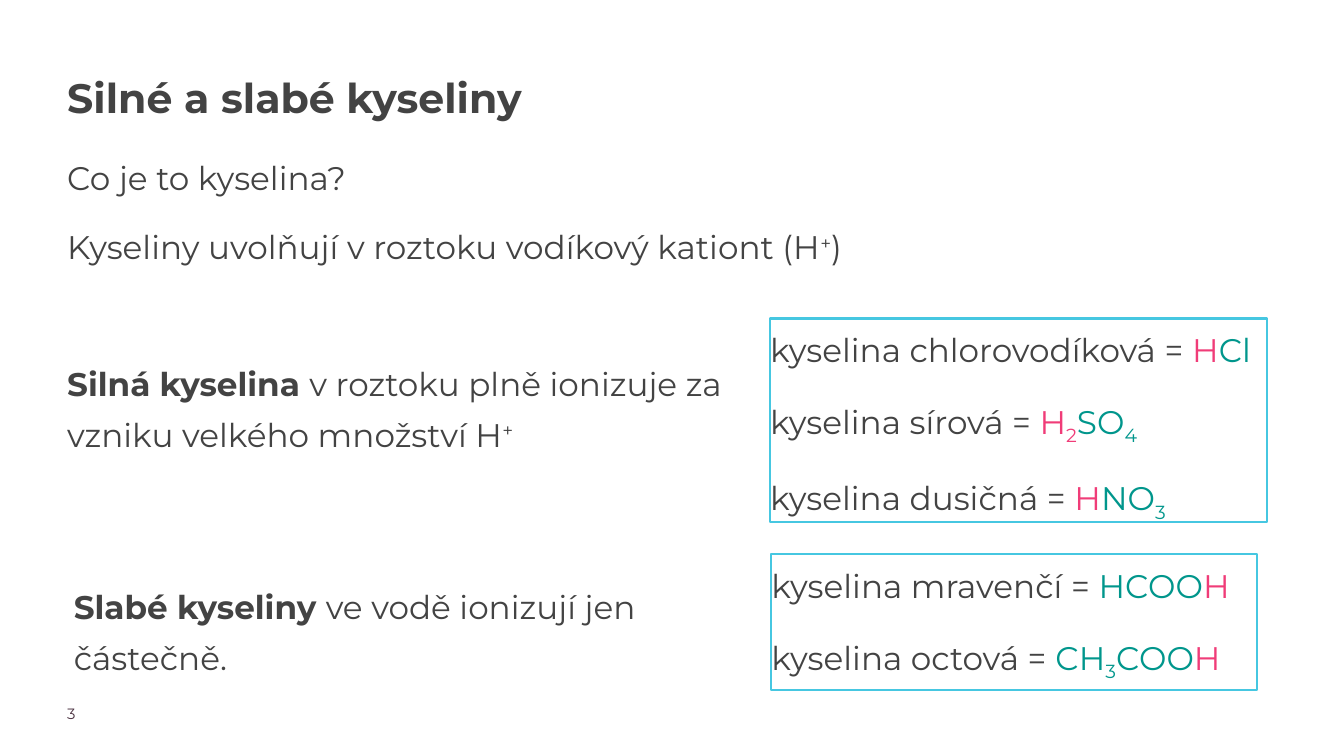
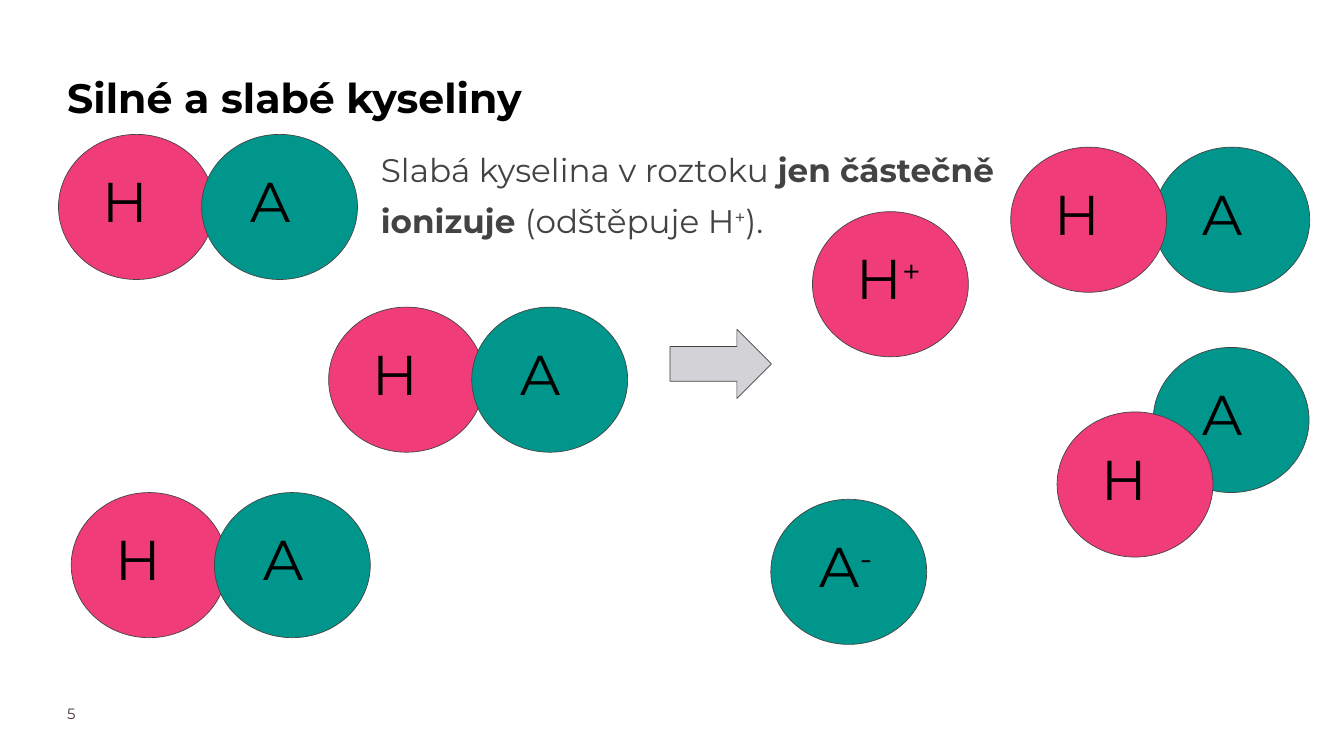
from dataclasses import dataclass

from lxml.etree import SubElement
from pptx import Presentation
from pptx.dml.color import RGBColor as Rgb
from pptx.enum.shapes import MSO_SHAPE as Preset
from pptx.enum.text import MSO_ANCHOR as Anchor, MSO_AUTO_SIZE as AutoSize, PP_ALIGN as Align
from pptx.oxml.ns import qn
from pptx.util import Inches, Pt


@dataclass(frozen=True)
class Theme:
    font: str = "Montserrat"
    ink: Rgb = Rgb(0x43, 0x43, 0x43)
    black: Rgb = Rgb(0, 0, 0)
    page_number: Rgb = Rgb(0x4B, 0x32, 0x41)
    hydrogen: Rgb = Rgb(0xF0, 0x3C, 0x78)
    residue: Rgb = Rgb(0x00, 0x96, 0x8C)
    frame: Rgb = Rgb(0x46, 0xC7, 0xE1)
    arrow: Rgb = Rgb(0xD2, 0xD2, 0xD7)
    title_size: int = 44
    body_size: int = 35
    symbol_size: int = 60
    page_size: int = 16
    title_spacing: float = 1.15
    body_spacing: float = 1.3
    paragraph_gap: int = 20


THEME = Theme()
SUPERSCRIPT, SUBSCRIPT = 30000, -25000
TITLE = "Silné a slabé kyseliny"
ATOM_SIZE = (2.32, 2.16)
BOND = (2.13, 0)


@dataclass(frozen=True)
class Part:
    """A stretch of text that differs from the rest of its paragraph."""
    text: str
    color: Rgb = None
    bold: bool = None
    baseline: int = None


def bold(text):
    return Part(text, bold=True)


def sup(text):
    return Part(text, baseline=SUPERSCRIPT)


def hydrogen(text, baseline=None):
    return Part(text, THEME.hydrogen, baseline=baseline)


def residue(text, baseline=None):
    return Part(text, THEME.residue, baseline=baseline)


def place(shape, box):
    shape.left, shape.top, shape.width, shape.height = map(Inches, box)


def prepare_frame(frame, inset=0):
    frame.word_wrap = True
    frame.auto_size = AutoSize.NONE
    frame.vertical_anchor = Anchor.TOP
    frame.margin_left = frame.margin_top = Inches(inset)
    frame.margin_right = frame.margin_bottom = Inches(inset)


def fill_paragraph(paragraph, parts, size, color, spacing=1.0, is_bold=None):
    properties = paragraph._p.get_or_add_pPr()
    properties.set("marL", "0")
    properties.set("indent", "0")
    paragraph.alignment = Align.LEFT
    paragraph.line_spacing = spacing
    paragraph.space_before = Pt(0)
    SubElement(properties, qn("a:buNone"))
    font = paragraph.font
    font.name, font.size, font.bold = THEME.font, Pt(size), is_bold
    font.color.rgb = color
    for part in parts:
        part = Part(part) if isinstance(part, str) else part
        run = paragraph.add_run()
        run.text = part.text
        if part.bold is not None:
            run.font.bold = part.bold
        if part.color is not None:
            run.font.color.rgb = part.color
        if part.baseline is not None:
            run._r.get_or_add_rPr().set("baseline", str(part.baseline))


def write_body(shape, paragraphs, inset=0):
    frame = shape.text_frame
    prepare_frame(frame, inset)
    for index, parts in enumerate(paragraphs):
        paragraph = frame.add_paragraph() if index else frame.paragraphs[0]
        fill_paragraph(paragraph, parts, THEME.body_size, THEME.ink, THEME.body_spacing)
        if index:
            paragraph.space_before = Pt(THEME.paragraph_gap)
    paragraph.space_after = Pt(THEME.paragraph_gap)


def add_text(slide, box, parts, size, color, inset=0):
    textbox = slide.shapes.add_textbox(*map(Inches, box))
    prepare_frame(textbox.text_frame, inset)
    fill_paragraph(textbox.text_frame.paragraphs[0], parts, size, color)


def add_body_text(slide, box, paragraphs):
    write_body(slide.shapes.add_textbox(*map(Inches, box)), paragraphs, inset=0.1)


def add_preset(slide, preset, box, fill, line, line_width):
    shape = slide.shapes.add_shape(preset, *map(Inches, box))
    shape.shadow.inherit = False
    if fill is None:
        shape.fill.background()
    else:
        shape.fill.solid()
        shape.fill.fore_color.rgb = fill
    shape.line.color.rgb = line
    shape.line.width = Pt(line_width)
    return shape


def add_acid_list(slide, box, acids):
    frame = add_preset(slide, Preset.RECTANGLE, box, None, THEME.frame, 2.25)
    write_body(frame, acids)


def add_slide(deck, layout_name, title_color, number):
    """Add a slide with the shared title and page number."""
    slide = deck.slides.add_slide(deck.slide_layouts.get_by_name(layout_name))
    title = slide.shapes.title
    place(title, (1, 0.97, 14.44, 1.78))
    prepare_frame(title.text_frame)
    fill_paragraph(title.text_frame.paragraphs[0], [TITLE], THEME.title_size,
                   title_color, THEME.title_spacing, is_bold=True)
    add_text(slide, (1, 10.48, 1.57, 0.39), [number], THEME.page_size, THEME.page_number)
    return slide


def add_atom(slide, left, top, color, label_left, label_size, symbol):
    add_preset(slide, Preset.OVAL, (left, top, *ATOM_SIZE), color, THEME.ink, 0.75)
    add_text(slide, (left + label_left, top + 0.38, *label_size), symbol,
             THEME.symbol_size, THEME.black, inset=0.1)


def add_hydrogen(slide, left, top, charge=()):
    add_atom(slide, left, top, THEME.hydrogen, 0.56, (3.71, 2.61), ["H", *charge])


def add_residue(slide, left, top, charge=()):
    add_atom(slide, left, top, THEME.residue, 0.63, (1.51, 1.34), ["A", *charge])


def add_molecule(slide, left, top, bond=BOND, hydrogen_in_front=False):
    """Draw H at left, top and A shifted from it by bond."""
    atoms = [(add_hydrogen, left, top), (add_residue, left + bond[0], top + bond[1])]
    for add, x, y in reversed(atoms) if hydrogen_in_front else atoms:
        add(slide, x, y)


def build_definitions(deck):
    slide = add_slide(deck, "Two Content", THEME.ink, "3")
    definition, strong_acid = list(slide.placeholders)[1:]
    place(definition, (1, 2.17, 17.99, 2.02))
    write_body(definition, [
        ["Co je to kyselina?"],
        ["Kyseliny uvolňují v roztoku vodíkový kationt (H", sup("+"), ")"],
    ])
    place(strong_acid, (1, 5.24, 10.24, 2.02))
    write_body(strong_acid, [
        [bold("Silná kyselina "),
         "v roztoku plně ionizuje za vzniku velkého množství H", sup("+")],
    ])
    add_acid_list(slide, (11.46, 4.74, 7.4, 3.03), [
        ["kyselina chlorovodíková = ", hydrogen("H"), residue("Cl")],
        ["kyselina sírová = ", hydrogen("H"), hydrogen("2", SUBSCRIPT),
         residue("SO"), residue("4", SUBSCRIPT)],
        ["kyselina dusičná = ", hydrogen("H"), residue("NO"), residue("3", SUBSCRIPT)],
    ])
    add_body_text(slide, (1, 8.46, 10.46, 1.66), [
        [bold("Slabé kyseliny "), "ve vodě ionizují jen částečně."],
    ])
    add_acid_list(slide, (11.48, 8.25, 7.23, 2.02), [
        ["kyselina mravenčí = ", residue("HCOO"), hydrogen("H")],
        ["kyselina octová = ", residue("CH"), residue("3", SUBSCRIPT),
         residue("COO"), hydrogen("H")],
    ])


def build_weak_acid(deck):
    slide = add_slide(deck, "Title Only", THEME.black, "5")
    for left, top in [(0.87, 2), (4.89, 4.57), (1.06, 7.33)]:
        add_molecule(slide, left, top)
    add_body_text(slide, (5.57, 1.96, 10.16, 3.28), [
        ["Slabá kyselina v roztoku ", bold("jen částečně ionizuje "),
         "(odštěpuje H", sup("+"), ")."],
    ])
    add_preset(slide, Preset.RIGHT_ARROW, (9.97, 4.9, 1.51, 1.03),
               THEME.arrow, THEME.ink, 0.75)
    add_hydrogen(slide, 12.09, 3.15, [sup("+")])
    add_residue(slide, 11.47, 7.43, [sup("-")])
    add_molecule(slide, 15.04, 2.19, hydrogen_in_front=True)
    add_molecule(slide, 15.73, 6.13, bond=(1.43, -0.96), hydrogen_in_front=True)


def main():
    deck = Presentation()
    deck.slide_width, deck.slide_height = Inches(20), Inches(11.25)
    build_definitions(deck)
    build_weak_acid(deck)
    deck.save("out.pptx")


if __name__ == "__main__":
    main()
